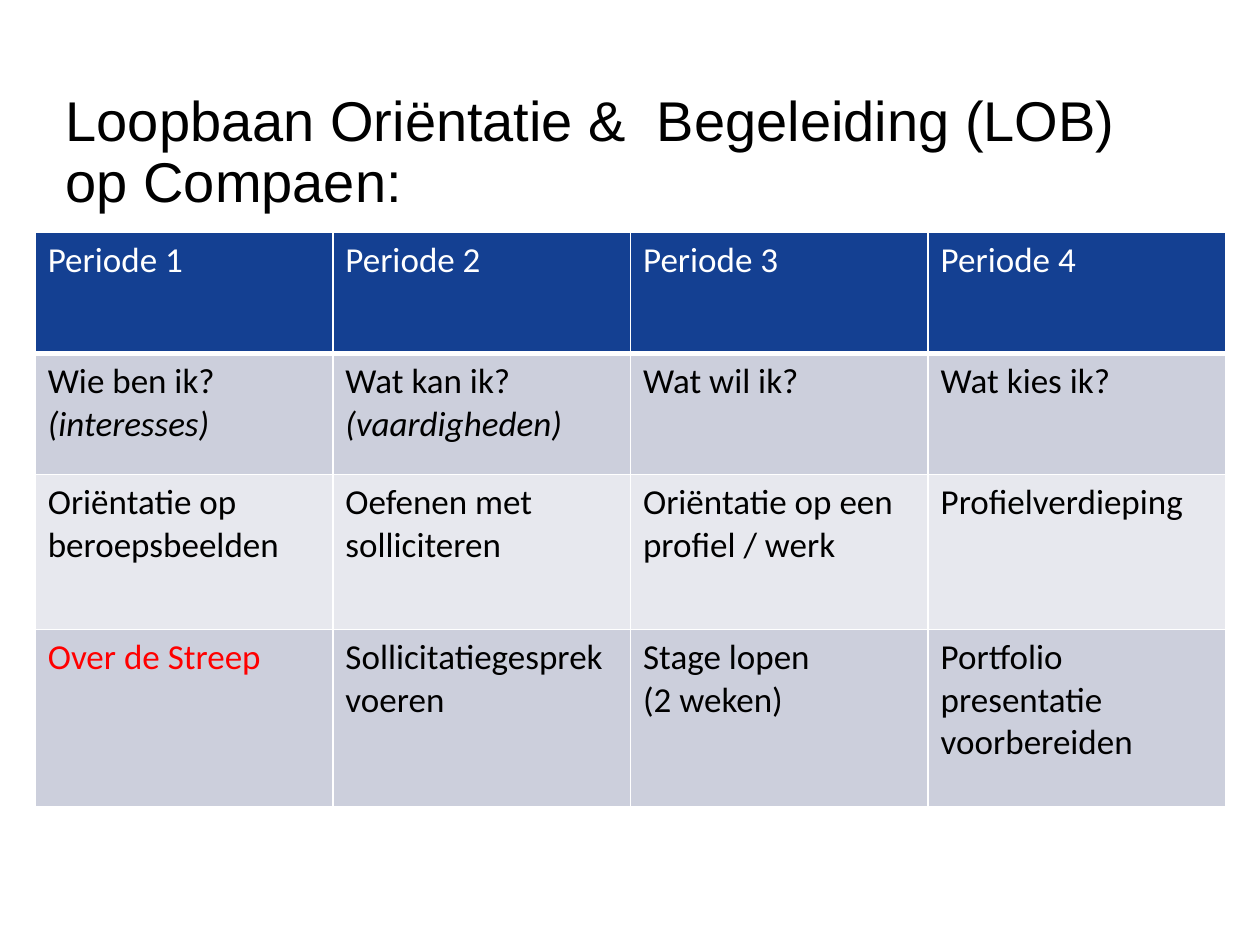
from lxml import etree
from pptx import Presentation
from pptx.dml.color import RGBColor
from pptx.enum.text import MSO_ANCHOR, PP_ALIGN
from pptx.oxml.ns import qn
from pptx.util import Cm, Pt

LEFT = PP_ALIGN.LEFT
TOP = MSO_ANCHOR.TOP
MIDDLE = MSO_ANCHOR.MIDDLE

THEME = {
    "title font": "Arial", "title size": Pt(32),
    "table font": "Calibri", "table size": Pt(20),
    "text": RGBColor.from_string("000000"),
    "light": RGBColor.from_string("FFFFFF"),
    "accent": RGBColor.from_string("FF0000"),
    "head": RGBColor.from_string("144092"),
    "bands": [RGBColor.from_string("E7E8EE"), RGBColor.from_string("CCCFDC")],
}

ROWS = [
    ["Periode 1", "Periode 2", "Periode 3", "Periode 4"],
    ["Wie ben ik?\n(interesses)", "Wat kan ik?\n(vaardigheden)",
     "Wat wil ik?", "Wat kies ik?"],
    ["Oriëntatie op beroepsbeelden", "Oefenen met solliciteren",
     "Oriëntatie op een profiel / werk", "Profielverdieping"],
    ["Over de Streep", "Sollicitatiegesprek voeren",
     "Stage lopen\n(2 weken)", "Portfolio presentatie voorbereiden"],
]
ITALIC = {"(interesses)", "(vaardigheden)"}
ACCENT = {"Over de Streep"}
HEIGHTS = [Cm(2.44), Cm(2.44), Cm(3.12), Cm(3.58)]
WIDTH = Cm(6)


def set_font(font, part, color):
    font.name = THEME[part + " font"]
    font.size = THEME[part + " size"]
    font.color.rgb = color
    font.bold = False


def add_borders(cell, below):
    """Draw white cell borders, placed before the fill as the schema asks."""
    props = cell._tc.get_or_add_tcPr()
    sides = {"a:lnL": 1, "a:lnR": 1, "a:lnT": 1, "a:lnB": below}
    for place, (tag, width) in enumerate(sides.items()):
        line = etree.Element(qn(tag), w=str(Pt(width)))
        fill = etree.SubElement(line, qn("a:solidFill"))
        etree.SubElement(fill, qn("a:srgbClr"), val=str(THEME["light"]))
        props.insert(place, line)


deck = Presentation()
deck.slide_width, deck.slide_height = Cm(25.4), Cm(19.05)
slide = deck.slides.add_slide(deck.slide_layouts[5])

# Title
title = slide.shapes.title
title.left, title.top = Cm(1.07), Cm(1.68)
title.width, title.height = Cm(22.86), Cm(2.84)
frame = title.text_frame
frame.text = "Loopbaan Oriëntatie &  Begeleiding (LOB) op Compaen:"
frame.word_wrap = True
frame.vertical_anchor = MIDDLE
para = frame.paragraphs[0]
para.alignment = LEFT
para.line_spacing = 0.9
set_font(para.runs[0].font, "title", THEME["text"])

# Table of the four periods
count = len(ROWS[0])
table = slide.shapes.add_table(
    len(ROWS), count, Cm(0.71), Cm(4.69), WIDTH * count, sum(HEIGHTS)).table
for col in table.columns:
    col.width = WIDTH

for r, (texts, height) in enumerate(zip(ROWS, HEIGHTS)):
    table.rows[r].height = height
    for c, text in enumerate(texts):
        cell = table.cell(r, c)
        cell.text = text
        cell.vertical_anchor = TOP
        cell.fill.solid()
        cell.fill.fore_color.rgb = THEME["bands"][r % 2] if r else THEME["head"]
        add_borders(cell, 1 if r else 3)
        for para in cell.text_frame.paragraphs:
            color = THEME["text"] if r else THEME["light"]
            if para.text in ACCENT:
                color = THEME["accent"]
            run = para.runs[0]
            set_font(run.font, "table", color)
            run.font.italic = para.text in ITALIC

deck.save("out.pptx")
